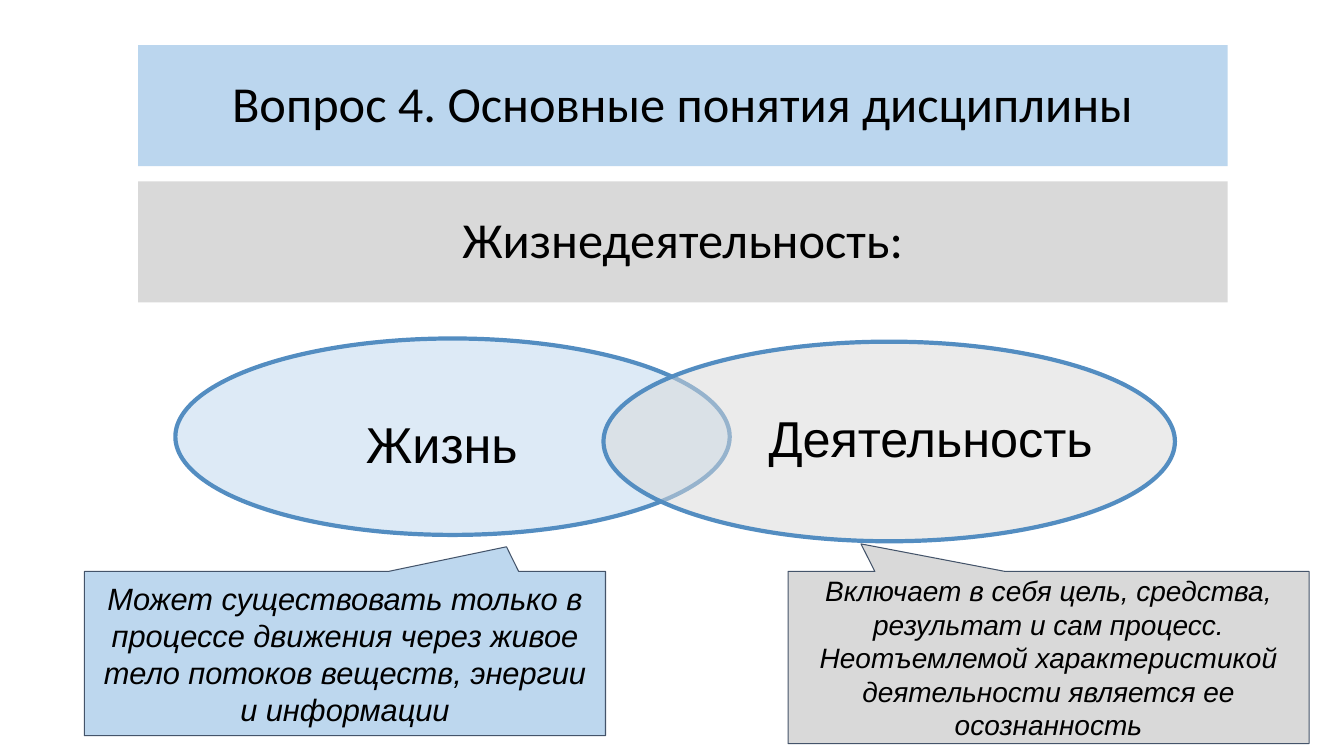
from lxml.etree import SubElement
from pptx import Presentation
from pptx.dml.color import RGBColor
from pptx.enum.shapes import MSO_SHAPE
from pptx.enum.text import MSO_ANCHOR, PP_ALIGN
from pptx.oxml.ns import qn
from pptx.util import Cm, Pt

BLACK = RGBColor(0x00, 0x00, 0x00)
SKY = RGBColor(0xBB, 0xD6, 0xEE)
BLUE = RGBColor(0xBD, 0xD7, 0xEE)
GREY = RGBColor(0xD9, 0xD9, 0xD9)
EDGE = RGBColor(0x53, 0x8D, 0xC1)
SLATE = RGBColor(0x44, 0x54, 0x6A)

deck = Presentation()
deck.slide_width = Cm(33.87)
deck.slide_height = Cm(19.05)
slide = deck.slides.add_slide(deck.slide_layouts[6])


def draw(kind, box, fill, line=None, width=0):
    shape = slide.shapes.add_shape(kind, *[Cm(v) for v in box])
    shape.shadow.inherit = False
    shape.fill.solid()
    shape.fill.fore_color.rgb = fill
    if line is None:
        shape.line.fill.background()
    else:
        shape.line.color.rgb = line
        shape.line.width = Pt(width)
    return shape


def write(shape, text, font, size, pad, space=1.0, slant=False):
    frame = shape.text_frame
    frame.word_wrap = True
    frame.vertical_anchor = MSO_ANCHOR.MIDDLE
    frame.margin_left = frame.margin_right = Cm(pad[0])
    frame.margin_top = frame.margin_bottom = Cm(pad[1])
    frame.text = text
    para = frame.paragraphs[0]
    para.alignment = PP_ALIGN.CENTER
    para.line_spacing = space
    run = para.runs[0]
    run.font.name = font
    run.font.size = Pt(size)
    run.font.italic = slant
    run.font.color.rgb = BLACK


bands = [
    ("Вопрос 4. Основные понятия дисциплины", 1.14, SKY),
    ("Жизнедеятельность:", 4.57, GREY),
]
for text, top, fill in bands:
    band = draw(MSO_SHAPE.RECTANGLE, (3.48, top, 27.46, 3.05), fill)
    write(band, text, "Calibri", 36, (0.25, 0.13), 0.9)

ovals = [
    ("Жизнь", (4.42, 8.53, 13.97, 4.95), BLUE, (7.11, 9.37, 8.05, 3.78)),
    ("Деятельность", (15.21, 8.61, 14.4, 5.03), GREY, (19.3, 9.19, 8.31, 3.84)),
]
for text, box, fill, place in ovals:
    oval = draw(MSO_SHAPE.OVAL, box, fill, EDGE, 3)
    color = oval.fill._xPr.find(qn("a:solidFill")).find(qn("a:srgbClr"))
    SubElement(color, qn("a:alpha")).set("val", "50000")
    label = slide.shapes.add_textbox(*[Cm(v) for v in place])
    write(label, text, "Arial", 36, (0, 0), 0.9)

notes = [
    ("Может существовать только в процессе движения через живое тело "
     "потоков веществ, энергии и информации",
     (2.13, 14.4, 13.13, 4.14), BLUE, 22, (0.31, -0.65, 0)),
    ("Включает в себя цель, средства, результат и сам процесс. "
     "Неотъемлемой характеристикой деятельности является ее осознанность",
     (19.86, 14.4, 13.13, 4.34), GREY, 20, (-0.36, -0.66, 0)),
]
for text, box, fill, size, tip in notes:
    note = draw(MSO_SHAPE.ROUNDED_RECTANGULAR_CALLOUT, box, fill, SLATE, 0.75)
    for i, value in enumerate(tip):
        note.adjustments[i] = value
    write(note, text, "Arial", size, (0.25, 0.25), slant=True)

deck.save("out.pptx")
